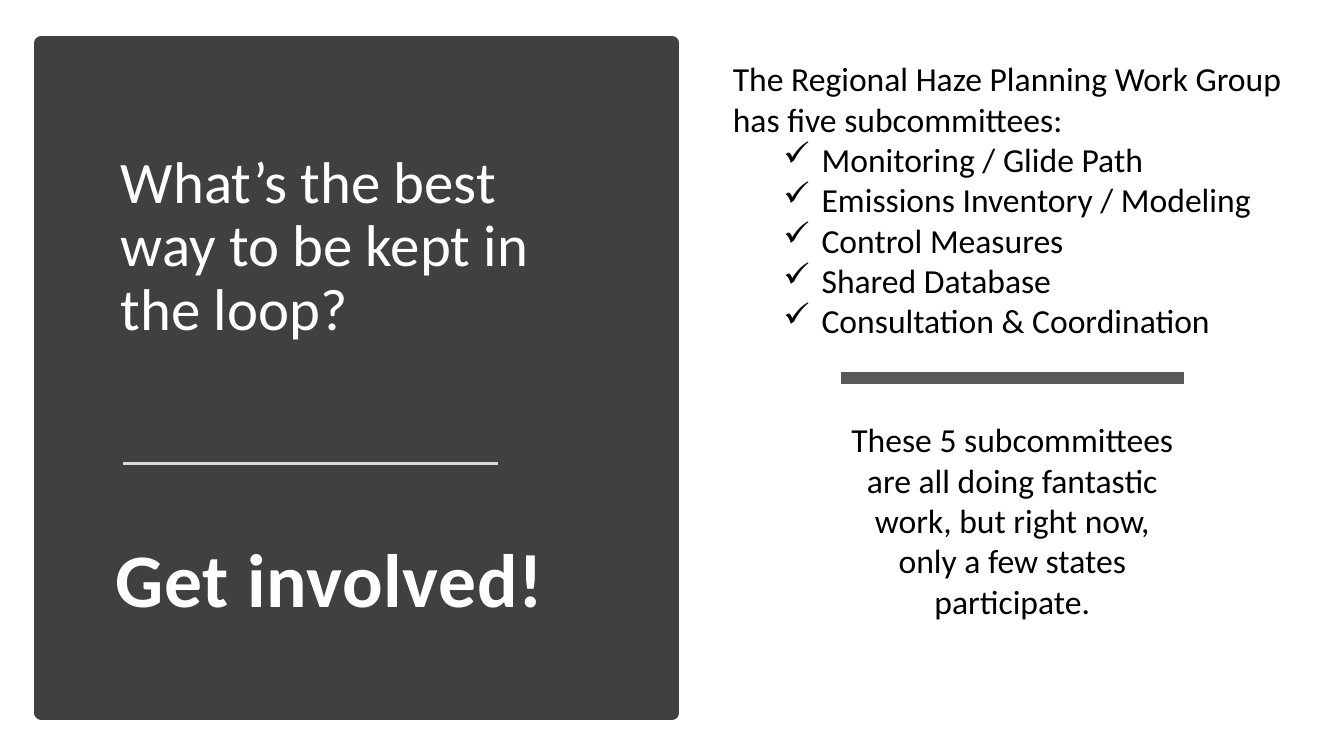
from lxml import etree
from pptx import Presentation
from pptx.dml.color import RGBColor
from pptx.enum.shapes import MSO_CONNECTOR, MSO_SHAPE
from pptx.enum.text import MSO_ANCHOR, MSO_AUTO_SIZE, PP_ALIGN
from pptx.oxml import parse_xml
from pptx.oxml.ns import nsdecls, qn
from pptx.util import Inches, Pt

WHITE = RGBColor(0xFF, 0xFF, 0xFF)
NEAR_WHITE = RGBColor(0xFE, 0xFE, 0xFE)
BLACK = RGBColor(0, 0, 0)
PANEL_GREY = RGBColor(0x40, 0x40, 0x40)
BAR_GREY = RGBColor(0x59, 0x59, 0x59)
RULE_GREY = RGBColor(0xD9, 0xD9, 0xD9)

deck = Presentation()
deck.slide_width, deck.slide_height = Inches(13.33), Inches(7.5)
page = deck.slides.add_slide(deck.slide_layouts[6])


def add_text(place, lines, size, color, align=PP_ALIGN.LEFT):
    box = page.shapes.add_textbox(*[Inches(length) for length in place])
    box.text_frame.word_wrap = True
    box.text_frame.text = "\n".join(lines)
    for para in box.text_frame.paragraphs:
        para.alignment = align
        para.font.name = "Calibri"
        para.font.size = Pt(size)
        para.font.color.rgb = color
    return box.text_frame


# Dark panel
panel = page.shapes.add_shape(
    MSO_SHAPE.RECTANGLE, Inches(0.41), Inches(0.43), Inches(6.26), Inches(6.64))
panel.shadow.inherit = False
panel.fill.solid()
panel.fill.fore_color.rgb = PANEL_GREY
panel.line.color.rgb = PANEL_GREY
panel.line.width = Pt(10)

# Title
title = add_text((1.1, 1.34, 4.85, 2.11),
                 ["What’s the best way to be kept in the loop?"], 42, WHITE)
title.vertical_anchor = MSO_ANCHOR.BOTTOM
title.paragraphs[0].line_spacing = 0.9

# Divider lines
for left, right, y, color, width in [(8.34, 11.74, 3.75, BAR_GREY, 8),
                                     (1.22, 4.94, 4.6, RULE_GREY, 1.75)]:
    divider = page.shapes.add_connector(
        MSO_CONNECTOR.STRAIGHT, Inches(left), Inches(y), Inches(right), Inches(y))
    divider.line.color.rgb = color
    divider.line.width = Pt(width)
    etree.SubElement(divider._element.spPr, qn("a:effectLst"))

# Subcommittee list with check marks
subcommittees = add_text((7.17, 0.53, 5.75, 2.93), [
    "The Regional Haze Planning Work Group has five subcommittees:",
    "Monitoring / Glide Path",
    "Emissions Inventory / Modeling",
    "Control Measures",
    "Shared Database",
    "Consultation & Coordination",
], 24, BLACK)
for para in subcommittees.paragraphs[1:]:
    para.level = 1
    properties = para._p.get_or_add_pPr()
    properties.set("marL", str(Inches(0.88)))
    properties.set("indent", str(Inches(-0.38)))
    bullet = parse_xml(f'<a:buChar {nsdecls("a")} char="✓"/>')
    properties.find(qn("a:defRPr")).addprevious(bullet)

# Participation remark
add_text((8.34, 4.11, 3.4, 2.12),
         ["These 5 subcommittees are all doing fantastic work, "
          "but right now, only a few states participate."],
         24, BLACK, PP_ALIGN.CENTER)

# Call to action with outline and soft shadow
call = add_text((1.02, 5.23, 4.5, 1.01), ["Get involved!"], 54, NEAR_WHITE, PP_ALIGN.CENTER)
call.word_wrap = False
call.auto_size = MSO_AUTO_SIZE.SHAPE_TO_FIT_TEXT
span = call.paragraphs[0].runs[0]
span.font.bold = True
span.font.color.rgb = NEAR_WHITE
letters = span._r.get_or_add_rPr()
letters.set("spc", "50")
letters.insert(0, parse_xml(
    f'<a:ln {nsdecls("a")} w="9525"><a:solidFill><a:srgbClr val="4472C4"/></a:solidFill></a:ln>'))
letters.append(parse_xml(
    f'<a:effectLst {nsdecls("a")}><a:outerShdw blurRad="38100" dist="25400" dir="5400000">'
    '<a:srgbClr val="4472C4"><a:alpha val="60000"/></a:srgbClr></a:outerShdw></a:effectLst>'))

deck.save("out.pptx")
